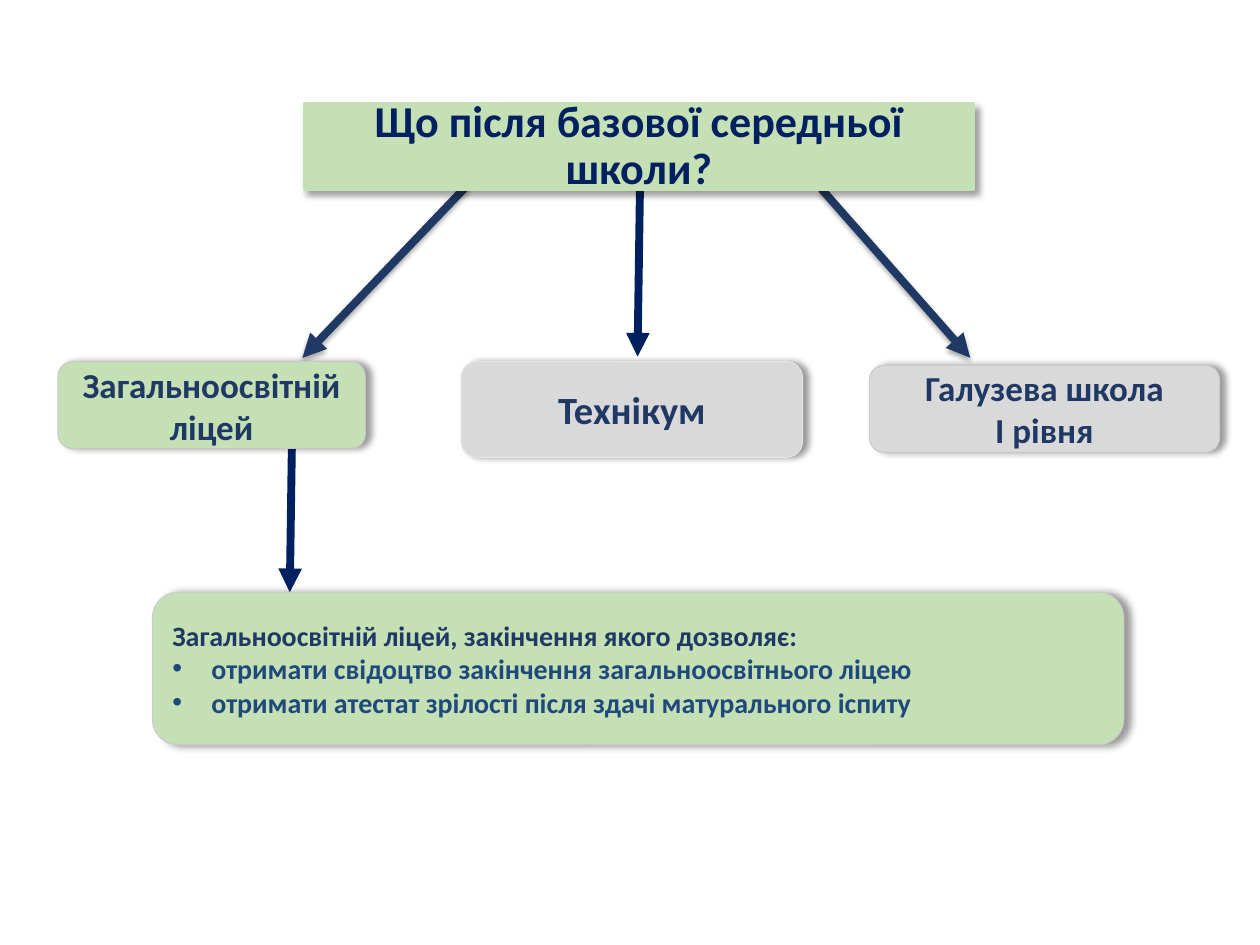
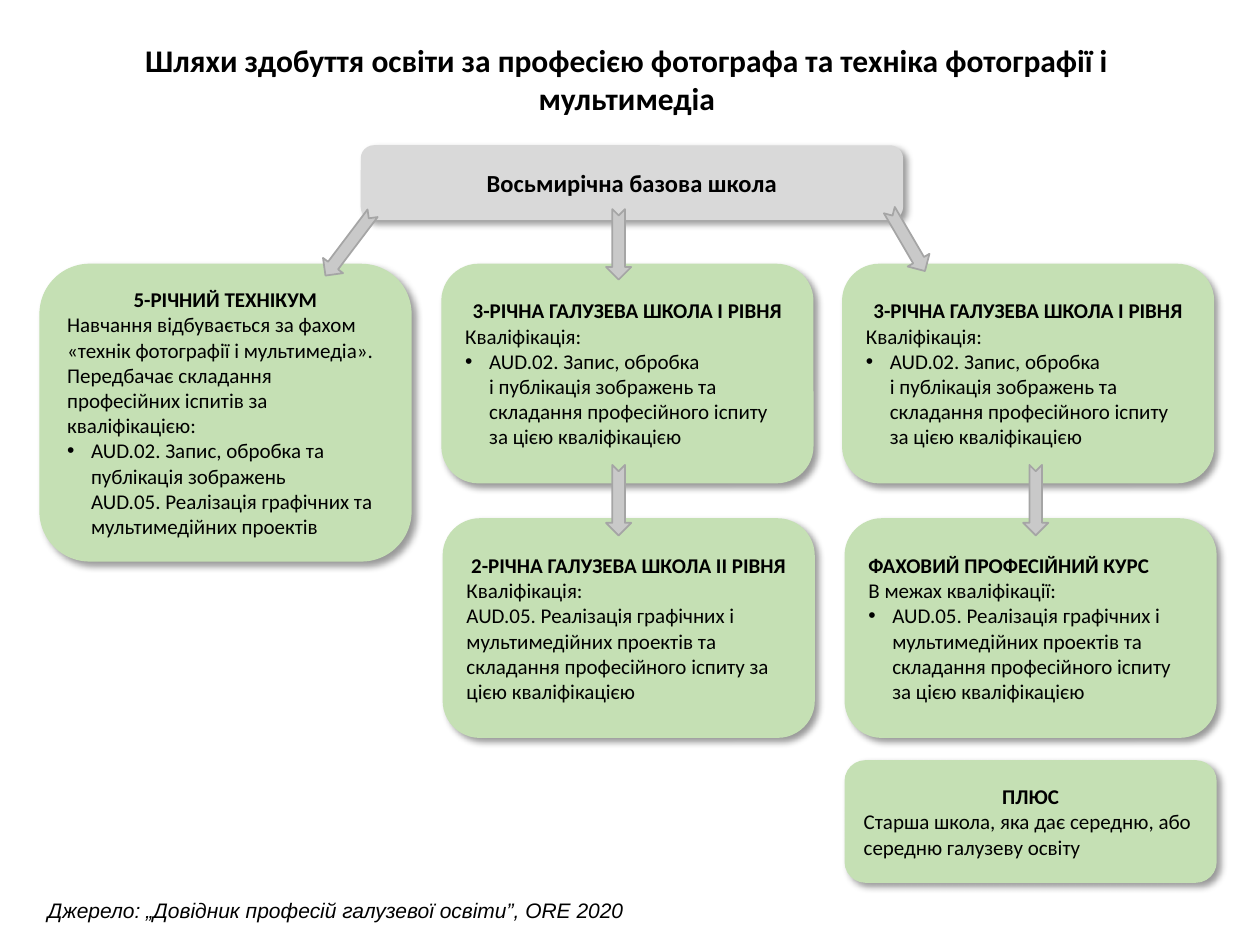
from dataclasses import dataclass

from lxml.etree import SubElement
from pptx import Presentation
from pptx.dml.color import RGBColor
from pptx.enum.shapes import MSO_CONNECTOR as Connector, MSO_SHAPE as Preset
from pptx.enum.text import MSO_ANCHOR as Anchor, PP_ALIGN as Align
from pptx.oxml.ns import qn
from pptx.util import Inches, Pt

GREEN, GREY, BLACK = "C5E0B4", "D9D9D9", "000000"
NAVY, DARK_BLUE, BULLET_BLUE = "002060", "203864", "1F497D"
EDGE, PALE_EDGE, ARROW_EDGE = "C9C9C9", "E7E6E6", "A5A5A5"


@dataclass(frozen=True)
class Para:
    """A paragraph with one font."""
    text: str
    size: float = 12
    color: str = BLACK
    bold: bool = False
    italic: bool = False
    centered: bool = False
    indent: float = 0
    spacing: float = 1.0
    font: str = "Calibri"


@dataclass(frozen=True)
class Box:
    """A filled box with a shadow and text."""
    left: float
    top: float
    width: float
    height: float
    paras: tuple[Para, ...]
    fill: str = GREEN
    edge: str = GREEN
    edge_width: float = 1
    shadow_angle: int = 45
    preset: Preset = Preset.ROUNDED_RECTANGLE


@dataclass(frozen=True)
class Arrow:
    """A straight arrow between two points."""
    start: tuple[float, float]
    end: tuple[float, float]
    color: str = NAVY
    shadow: bool = False


@dataclass(frozen=True)
class Notch:
    """A notched arrow turned about its centre."""
    left: float
    top: float
    angle: float = 90
    length: float = 0.56


def rgb(color: str) -> RGBColor:
    """Turn a hex string into a colour."""
    return RGBColor.from_string(color)


def cast_shadow(effects, blur: float, distance: float, angle: int, alpha: int) -> None:
    """Add an outer shadow to an effect list."""
    shadow = SubElement(effects, qn("a:outerShdw"), blurRad=str(Pt(blur)), dist=str(Pt(distance)),
                        dir=str(angle * 60000), algn="tl", rotWithShape="0")
    tint = SubElement(shadow, qn("a:srgbClr"), val=BLACK)
    SubElement(tint, qn("a:alpha"), val=str(alpha * 1000))


def write(frame, paras: tuple[Para, ...]) -> None:
    """Fill a text frame with paragraphs."""
    for index, item in enumerate(paras):
        para = frame.paragraphs[0] if index == 0 else frame.add_paragraph()
        para.text = item.text
        para.alignment = Align.CENTER if item.centered else Align.LEFT
        para.line_spacing = item.spacing
        font = para.font
        font.name, font.size = item.font, Pt(item.size)
        font.bold, font.italic = item.bold, item.italic
        font.color.rgb = rgb(item.color)
        if item.indent:
            props = para._p.get_or_add_pPr()
            props.set("marL", str(Inches(item.indent)))
            props.set("indent", str(-Inches(item.indent)))
            bullet_font = props.makeelement(qn("a:buFont"), {"typeface": "Arial"})
            bullet = props.makeelement(qn("a:buChar"), {"char": "•"})
            default = props.find(qn("a:defRPr"))
            default.addprevious(bullet_font)
            default.addprevious(bullet)


def add_preset(page, preset: Preset, place: tuple[float, ...], fill: str, edge: str, width: float):
    """Add a filled and outlined preset shape."""
    shape = page.shapes.add_shape(preset, *map(Inches, place))
    shape.fill.solid()
    shape.fill.fore_color.rgb = rgb(fill)
    shape.line.color.rgb = rgb(edge)
    shape.line.width = Pt(width)
    shape.shadow.inherit = False
    return shape


def add_box(page, box: Box) -> None:
    """Draw a box with its shadow and text."""
    place = (box.left, box.top, box.width, box.height)
    shape = add_preset(page, box.preset, place, box.fill, box.edge, box.edge_width)
    cast_shadow(shape._element.spPr.find(qn("a:effectLst")), 4, 3, box.shadow_angle, 40)
    shape.text_frame.word_wrap = True
    shape.text_frame.vertical_anchor = Anchor.MIDDLE
    write(shape.text_frame, box.paras)


def add_arrow(page, arrow: Arrow) -> None:
    """Draw a straight arrow."""
    line = page.shapes.add_connector(Connector.STRAIGHT, *map(Inches, arrow.start + arrow.end))
    line.line.color.rgb = rgb(arrow.color)
    line.line.width = Pt(4.5)
    SubElement(line.line._get_or_add_ln(), qn("a:tailEnd"), type="triangle")
    effects = SubElement(line._element.spPr, qn("a:effectLst"))
    if arrow.shadow:
        cast_shadow(effects, 3.1, 1.8, 90, 35)


def add_notch(page, notch: Notch) -> None:
    """Draw a notched arrow."""
    place = (notch.left, notch.top, notch.length, 0.2)
    shape = add_preset(page, Preset.NOTCHED_RIGHT_ARROW, place, EDGE, ARROW_EDGE, 1)
    shape.rotation = notch.angle


def add_text(page, place: tuple[float, ...], para: Para, wrap: bool) -> None:
    """Draw a text box."""
    frame = page.shapes.add_textbox(*map(Inches, place)).text_frame
    frame.word_wrap = wrap
    write(frame, (para,))


def heading(text: str, centered: bool = True) -> Para:
    """Make the bold first line of a school box."""
    return Para(text, bold=True, centered=centered)


def item(text: str) -> Para:
    """Make a bulleted line of a school box."""
    return Para(text, indent=0.19)


def choice(text: str, size: float = 20) -> Para:
    """Make a school type label."""
    return Para(text, size, DARK_BLUE, bold=True, centered=True)


def benefit(text: str) -> Para:
    """Make a bulleted benefit of the lyceum."""
    return Para(text, 16, BULLET_BLUE, bold=True, indent=0.31)


CHOICE_ARROWS = (
    Arrow((2.32, 3.31), (2.3, 4.7)),
    Arrow((6.52, 1.5), (7.7, 2.84), DARK_BLUE, True),
    Arrow((5.08, 1.43), (5.06, 2.83)),
    Arrow((3.71, 1.47), (2.4, 2.84), DARK_BLUE, True),
)
CHOICE_BOXES = (
    Box(3.66, 2.87, 2.71, 0.76, (choice("Технікум", 22),), GREY, PALE_EDGE, 0.5, 0),
    Box(6.9, 2.9, 2.78, 0.69, (choice("Галузева школа"), choice("І рівня")), GREY, EDGE, 0.5, 0),
    Box(1.21, 4.7, 7.71, 1.21, (
        Para("Загальноосвітній ліцей, закінчення якого дозволяє:", 16, DARK_BLUE, bold=True),
        benefit("отримати свідоцтво закінчення загальноосвітнього ліцею"),
        benefit("отримати атестат зрілості після здачі матурального іспиту"),
    ), GREEN, EDGE, 0.5, 0),
    Box(0.46, 2.87, 2.44, 0.69, (choice("Загальноосвітній ліцей"),), GREEN, EDGE, 0.5, 0),
    Box(2.41, 0.82, 5.32, 0.69, (
        Para("Що після базової середньої школи?", 25.2, NAVY, bold=True, centered=True, spacing=0.9),
    ), preset=Preset.RECTANGLE),
)

COLUMN_WIDTH, LEVEL_HEIGHT = 2.94, 1.73
FIRST_LEVEL, SECOND_LEVEL = 2.1, 4.12
QUALIFICATION = Para("Кваліфікація:")
SECOND_EXAM = ("AUD.05. Реалізація графічних і мультимедійних проектів та складання "
               "професійного іспиту за цією кваліфікацією")
TRADE_SCHOOL = (
    heading("3-РІЧНА ГАЛУЗЕВА ШКОЛА І РІВНЯ"),
    QUALIFICATION,
    item("AUD.02. Запис, обробка\ni публікація зображень та складання професійного іспиту "
         "за цією кваліфікацією"),
)
PATH_BOXES = (
    Box(0.32, FIRST_LEVEL, COLUMN_WIDTH, 2.35, (
        heading("5-РІЧНИЙ ТЕХНІКУМ"),
        Para("Навчання відбувається за фахом «технік фотографії і мультимедіа». "
             "Передбачає складання професійних іспитів за кваліфікацією:"),
        item("AUD.02. Запис, обробка та публікація зображень\n"
             "AUD.05. Реалізація графічних та мультимедійних проектів"),
    )),
    Box(2.87, 1.16, 4.29, 0.58,
        (Para("Восьмирічна базова школа", 14, bold=True, centered=True),), GREY, GREY),
    *(Box(left, FIRST_LEVEL, COLUMN_WIDTH, LEVEL_HEIGHT, TRADE_SCHOOL) for left in (3.51, 6.69)),
    Box(3.52, SECOND_LEVEL, COLUMN_WIDTH, LEVEL_HEIGHT, (
        heading("2-РІЧНА ГАЛУЗЕВА ШКОЛА ІІ РІВНЯ"), QUALIFICATION, Para(SECOND_EXAM))),
    Box(6.71, SECOND_LEVEL, COLUMN_WIDTH, LEVEL_HEIGHT, (
        heading("ФАХОВИЙ ПРОФЕСІЙНИЙ КУРС", centered=False),
        Para("В межах кваліфікації:"), item(SECOND_EXAM))),
    Box(6.71, 6.04, COLUMN_WIDTH, 0.96, (
        heading("ПЛЮС"), Para("Старша школа, яка дає середню, або середню галузеву освіту"))),
)
PATH_NOTCHES = (
    Notch(4.63, 1.84), Notch(4.63, 3.87), Notch(7.94, 3.87),
    Notch(6.92, 1.81, 59.7), Notch(2.46, 1.84, 127.1, 0.62),
)


def draw_choices(page) -> None:
    """Draw the choices after basic school."""
    for arrow in CHOICE_ARROWS:
        add_arrow(page, arrow)
    for box in CHOICE_BOXES:
        add_box(page, box)


def draw_paths(page) -> None:
    """Draw the paths to the photography professions."""
    add_text(page, (0.54, 0.28, 8.87, 0.71), Para(
        "Шляхи здобуття освіти за професією фотографа та техніка фотографії і мультимедіа",
        18, bold=True, centered=True), wrap=True)
    for box in PATH_BOXES:
        add_box(page, box)
    add_text(page, (0.28, 7.11, 4.86, 0.26), Para(
        "Джерело: „Довідник професій галузевої освіти”, ORE 2020",
        italic=True, spacing=0.8, font="Arial"), wrap=False)
    for notch in PATH_NOTCHES:
        add_notch(page, notch)


def main() -> None:
    """Build and save the deck."""
    deck = Presentation()
    deck.slide_width, deck.slide_height = Inches(10), Inches(7.5)
    for draw in (draw_choices, draw_paths):
        draw(deck.slides.add_slide(deck.slide_layouts[6]))
    deck.save("out.pptx")


if __name__ == "__main__":
    main()
